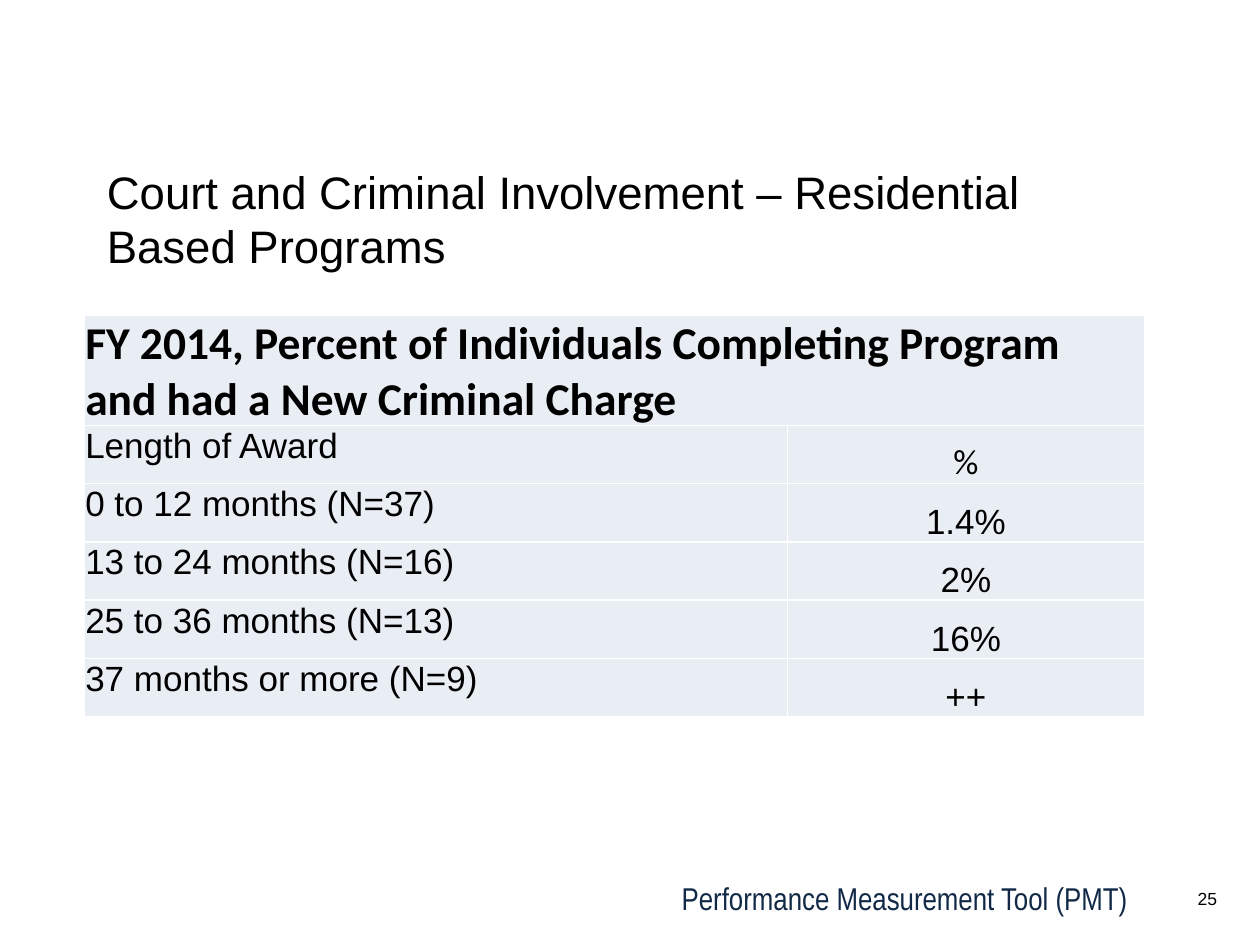
from lxml import etree
from pptx import Presentation
from pptx.dml.color import RGBColor
from pptx.enum import text
from pptx.oxml import ns
from pptx.util import Pt

# Content
TITLE = "Court and Criminal Involvement – Residential Based Programs"
FOOTER = "Performance Measurement Tool (PMT)"
PAGE_NUMBER = "25"
HEADING = "FY 2014, Percent of Individuals Completing Program and had a New Criminal Charge"
ROWS = [
    ("Length of Award", "%"),
    ("0 to 12 months (N=37)", "1.4%"),
    ("13 to 24 months (N=16)", "2%"),
    ("25 to 36 months (N=13)", "16%"),
    ("37 months or more (N=9)", "++"),
]
COLORS = {"ink": "000000", "navy": "112947", "cell": "E9EDF4", "border": "FFFFFF"}
COLUMN_WIDTHS = (402, 204)
HEADING_HEIGHT, ROW_HEIGHT = 34.5, 33.3
LEFT, RIGHT = text.PP_ALIGN.LEFT, text.PP_ALIGN.RIGHT
CENTER = text.PP_ALIGN.CENTER
TOP, BOTTOM = text.MSO_ANCHOR.TOP, text.MSO_ANCHOR.BOTTOM


def write(frame, words, size, font="Arial", color="ink", align=LEFT, bold=False):
    para = frame.paragraphs[0]
    para.alignment = align
    span = para.add_run()
    span.text = words
    span.font.size, span.font.name, span.font.bold = Pt(size), font, bold
    span.font.color.rgb = RGBColor.from_string(COLORS[color])
    return para


def add_box(page, place, words, size, wrap=True, **style):
    box = page.shapes.add_textbox(*map(Pt, place))
    box.text_frame.word_wrap = wrap
    return write(box.text_frame, words, size, **style)


def style_cell(cell, anchor):
    cell.vertical_anchor = anchor
    cell.margin_left = cell.margin_right = cell.margin_top = Pt(0.75)
    cell.margin_bottom = Pt(0)
    # Borders come before the fill in the cell properties
    properties = cell._tc.get_or_add_tcPr()
    for side in ("lnL", "lnR", "lnT", "lnB"):
        line = etree.SubElement(properties, ns.qn(f"a:{side}"), w=str(Pt(1)))
        fill = etree.SubElement(line, ns.qn("a:solidFill"))
        etree.SubElement(fill, ns.qn("a:srgbClr"), val=COLORS["border"])
    cell.fill.solid()
    cell.fill.fore_color.rgb = RGBColor.from_string(COLORS["cell"])


def add_award_table(page):
    frame = page.shapes.add_table(len(ROWS) + 1, 2, Pt(48), Pt(180), Pt(606), Pt(230.4))
    table = frame.table
    for column, width in zip(table.columns, COLUMN_WIDTHS):
        column.width = Pt(width)
    for index, row in enumerate(table.rows):
        row.height = Pt(ROW_HEIGHT if index else HEADING_HEIGHT)

    # Heading across both columns
    heading = table.cell(0, 0)
    heading.merge(table.cell(0, 1))
    for column in range(2):
        style_cell(table.cell(0, column), BOTTOM)
    write(heading.text_frame, HEADING, 26, font="Calibri", bold=True)

    # Award lengths and their percentages
    for index, (award, percent) in enumerate(ROWS, start=1):
        label, value = table.cell(index, 0), table.cell(index, 1)
        style_cell(label, TOP)
        style_cell(value, BOTTOM)
        write(label.text_frame, award, 20)
        write(value.text_frame, percent, 20, align=CENTER,
              font="Calibri" if index == 1 else "Arial")


def main():
    deck = Presentation()
    deck.slide_width, deck.slide_height = Pt(720), Pt(540)
    page = deck.slides.add_slide(deck.slide_layouts[6])

    # Footer and page number
    add_box(page, (300, 499, 351.5, 29), FOOTER, 18,
            font="Arial Narrow", color="navy", align=RIGHT)
    add_box(page, (676, 504, 26.6, 19.4), PAGE_NUMBER, 10, wrap=False, align=RIGHT)

    # Table and title
    add_award_table(page)
    title = add_box(page, (54, 90, 600, 70.6), TITLE, 26)
    title.space_after = Pt(4)

    deck.save("out.pptx")


if __name__ == "__main__":
    main()
